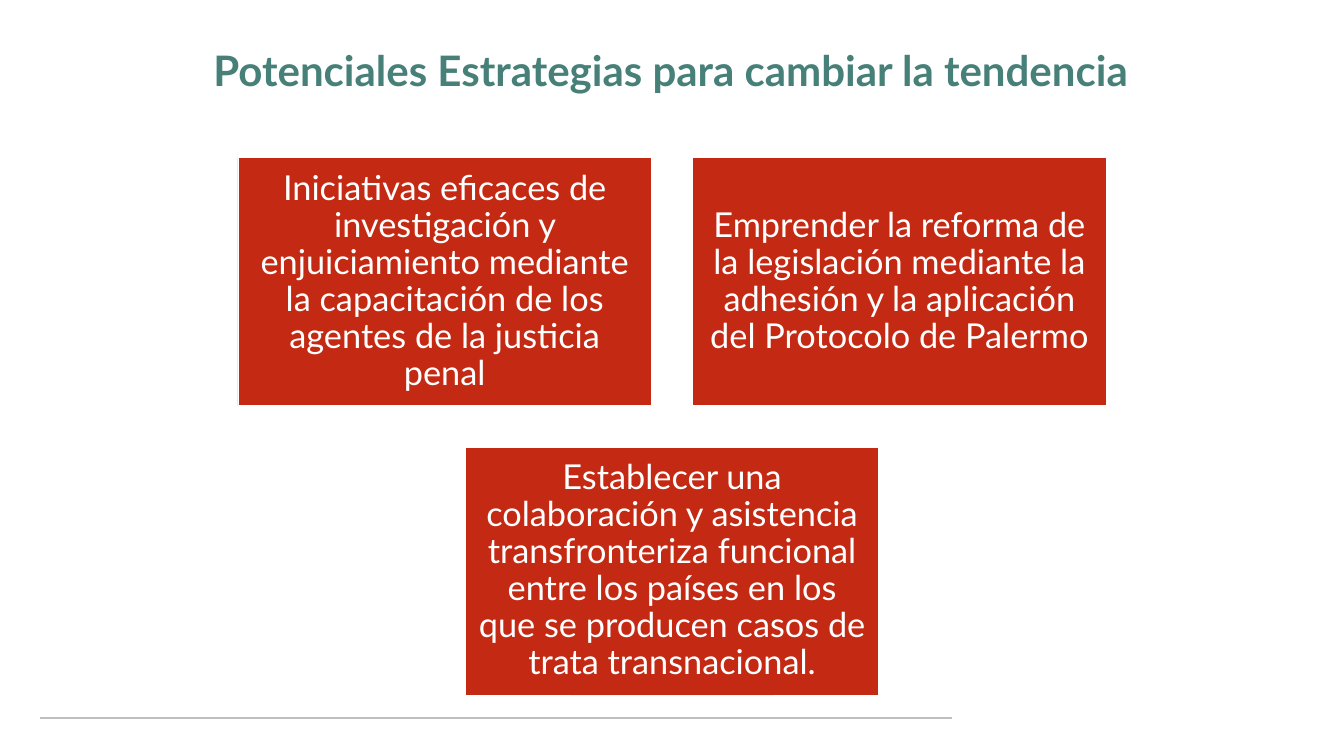
from dataclasses import dataclass

from lxml import etree
from pptx import Presentation
from pptx.dml.color import RGBColor
from pptx.enum import shapes, text
from pptx.oxml.ns import qn
from pptx.util import Emu, Pt

EMU_PER_PX = 9144  # 100 px to the inch
SLIDE_WIDTH, SLIDE_HEIGHT = 2666, 1500
CARD_WIDTH, CARD_HEIGHT, CARD_GAP, CARDS_TOP = 820, 492, 82, 313
FONT = "Lato"
GREEN, RED, WHITE, GREY = "468078", "C42A13", "FFFFFF", "BFBFBF"


@dataclass(frozen=True)
class Box:
    left: int
    top: int
    width: int
    height: int


@dataclass(frozen=True)
class TextStyle:
    size: int
    color: str
    bold: bool
    margin_x: int
    margin_y: int


TITLE_STYLE = TextStyle(60, GREEN, True, 20, 10)
CARD_STYLE = TextStyle(49, WHITE, False, 20, 20)
TITLE_BOX = Box(80, 55, 2501, 179)
CARD_ROWS = [
    [
        "Iniciativas eficaces de investigación y enjuiciamiento mediante "
        "la capacitación de los agentes de la justicia penal",
        "Emprender la reforma de la legislación mediante la adhesión "
        "y la aplicación del Protocolo de Palermo",
    ],
    [
        "Establecer una colaboración y asistencia transfronteriza funcional "
        "entre los países en los que se producen casos de trata transnacional.",
    ],
]


def px(length: int) -> Emu:
    return Emu(length * EMU_PER_PX)


def rgb(color: str) -> RGBColor:
    return RGBColor.from_string(color)


def place(box: Box) -> tuple:
    return px(box.left), px(box.top), px(box.width), px(box.height)


def set_attributes(target, values: dict) -> None:
    for name, value in values.items():
        setattr(target, name, value)


def write_text(shape, content: str, style: TextStyle) -> None:
    frame = shape.text_frame
    set_attributes(frame, {
        "word_wrap": True,
        "auto_size": text.MSO_AUTO_SIZE.NONE,
        "vertical_anchor": text.MSO_ANCHOR.MIDDLE,
        "margin_left": px(style.margin_x),
        "margin_right": px(style.margin_x),
        "margin_top": px(style.margin_y),
        "margin_bottom": px(style.margin_y),
    })
    paragraph = frame.paragraphs[0]
    set_attributes(paragraph, {"alignment": text.PP_ALIGN.CENTER, "line_spacing": 0.9})
    run = paragraph.add_run()
    run.text = content
    set_attributes(run.font, {"name": FONT, "size": Pt(style.size), "bold": style.bold})
    run.font.color.rgb = rgb(style.color)


def add_footer_rule(slide) -> None:
    rule = slide.shapes.add_connector(
        shapes.MSO_CONNECTOR.STRAIGHT, px(80), px(1425), px(1888), px(1425))
    rule.line.color.rgb = rgb(GREY)
    rule.line.width = Pt(2.25)
    etree.SubElement(rule._element.spPr, qn("a:effectLst"))


def add_card(slide, box: Box, content: str) -> None:
    card = slide.shapes.add_shape(shapes.MSO_SHAPE.RECTANGLE, *place(box))
    card.shadow.inherit = False
    card.fill.solid()
    card.fill.fore_color.rgb = rgb(RED)
    card.line.color.rgb = rgb(WHITE)
    card.line.width = Pt(1)
    write_text(card, content, CARD_STYLE)


def add_cards(slide) -> None:
    """Draw each row of cards centred on the slide."""
    for row, contents in enumerate(CARD_ROWS):
        row_width = len(contents) * (CARD_WIDTH + CARD_GAP) - CARD_GAP
        row_left = (SLIDE_WIDTH - row_width) // 2
        top = CARDS_TOP + row * (CARD_HEIGHT + CARD_GAP)
        for column, content in enumerate(contents):
            left = row_left + column * (CARD_WIDTH + CARD_GAP)
            add_card(slide, Box(left, top, CARD_WIDTH, CARD_HEIGHT), content)


def main() -> None:
    presentation = Presentation()
    presentation.slide_width = px(SLIDE_WIDTH)
    presentation.slide_height = px(SLIDE_HEIGHT)
    slide = presentation.slides.add_slide(presentation.slide_layouts[6])
    add_footer_rule(slide)
    title = slide.shapes.add_textbox(*place(TITLE_BOX))
    write_text(title, "Potenciales Estrategias para cambiar la tendencia", TITLE_STYLE)
    add_cards(slide)
    presentation.save("out.pptx")


if __name__ == "__main__":
    main()
